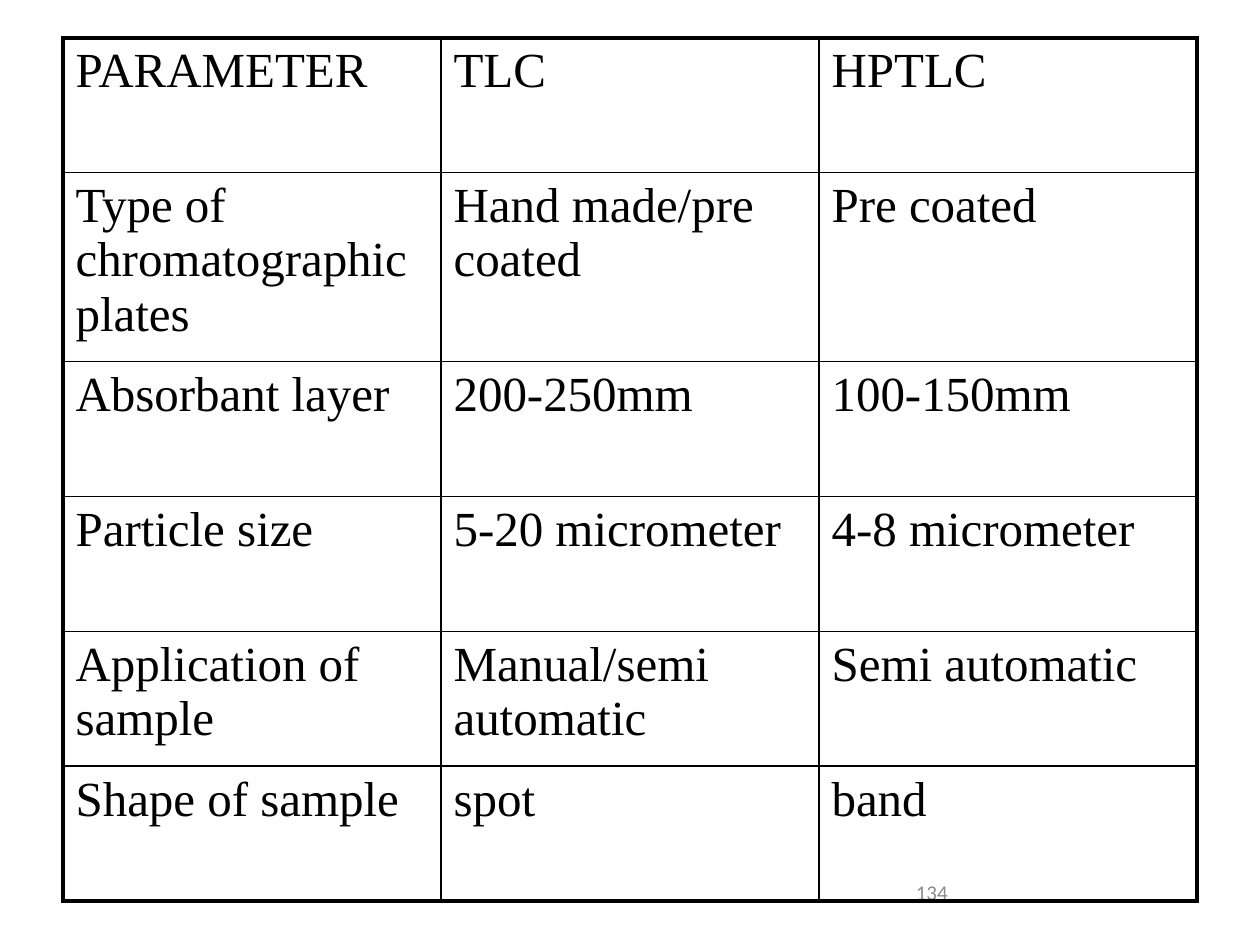
"""Build a slide with a table comparing TLC and HPTLC."""
from lxml import etree
from pptx import Presentation
from pptx.dml.color import RGBColor
from pptx.enum.text import MSO_ANCHOR, PP_ALIGN
from pptx.oxml.ns import qn
from pptx.util import Inches, Pt

MIDDLE = MSO_ANCHOR.MIDDLE
LEFT = PP_ALIGN.LEFT
BLACK = RGBColor(0x00, 0x00, 0x00)
GRAY = RGBColor(0x8C, 0x8C, 0x8C)
OUTER, INNER = 2.25, 1
BLANK_LAYOUT = 6

COMPARISON = [
    ("PARAMETER", "TLC", "HPTLC"),
    ("Type of chromatographic plates", "Hand made/pre coated", "Pre coated"),
    ("Absorbant layer", "200-250mm", "100-150mm"),
    ("Particle size", "5-20 micrometer", "4-8 micrometer"),
    ("Application of sample", "Manual/semi automatic", "Semi automatic"),
    ("Shape of sample", "spot", "band"),
]
PAGE_NUMBER = "134"
COLUMN_WIDTH, ROW_HEIGHT = 3, 1.07


def write(frame, text, font_name, size, color):
    frame.text = text
    paragraph = frame.paragraphs[0]
    paragraph.alignment = LEFT
    paragraph.font.name = font_name
    paragraph.font.size = Pt(size)
    paragraph.font.color.rgb = color


def set_borders(cell, widths):
    properties = cell._tc.get_or_add_tcPr()
    for index, (side, width) in enumerate(widths.items()):
        line = etree.Element(qn(f"a:ln{side}"), w=str(Pt(width)))
        fill = etree.SubElement(line, qn("a:solidFill"))
        etree.SubElement(fill, qn("a:srgbClr"), val=str(BLACK))
        properties.insert(index, line)


def add_page_number(page):
    box = page.shapes.add_textbox(Inches(7.17), Inches(6.83), Inches(2.33), Inches(0.5))
    box.text_frame.word_wrap = True
    box.text_frame.vertical_anchor = MIDDLE
    write(box.text_frame, PAGE_NUMBER, "Calibri", 12, GRAY)


def add_comparison(page):
    row_count, column_count = len(COMPARISON), len(COMPARISON[0])
    table = page.shapes.add_table(
        row_count, column_count, Inches(0.5), Inches(0.3),
        Inches(COLUMN_WIDTH * column_count), Inches(ROW_HEIGHT * row_count),
    ).table
    table.first_row = False
    table.horz_banding = False
    for row, texts in enumerate(COMPARISON):
        for column, text in enumerate(texts):
            cell = table.cell(row, column)
            cell.fill.background()
            write(cell.text_frame, text, "Times New Roman", 28, BLACK)
            set_borders(cell, {
                "L": OUTER if column == 0 else INNER,
                "R": OUTER if column == column_count - 1 else INNER,
                "T": OUTER if row == 0 else INNER,
                "B": OUTER if row == row_count - 1 else INNER,
            })


def main():
    deck = Presentation()
    deck.slide_width, deck.slide_height = Inches(10), Inches(7.5)
    page = deck.slides.add_slide(deck.slide_layouts[BLANK_LAYOUT])
    add_page_number(page)
    add_comparison(page)
    deck.save("out.pptx")


if __name__ == "__main__":
    main()
